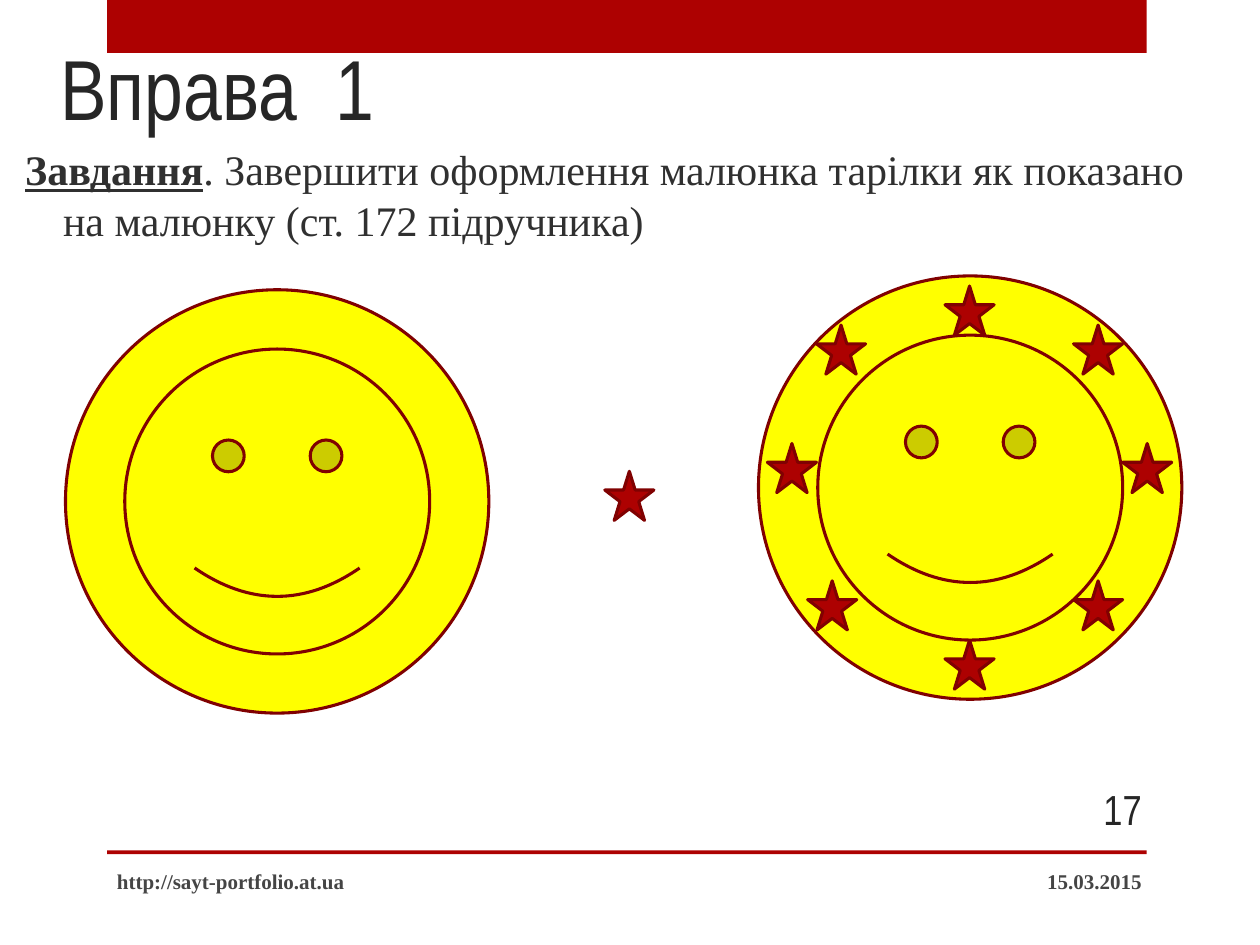
from lxml.etree import SubElement
from pptx import Presentation
from pptx.dml.color import RGBColor
from pptx.enum.shapes import MSO_SHAPE
from pptx.enum.text import MSO_ANCHOR, MSO_AUTO_SIZE, PP_ALIGN
from pptx.oxml.ns import qn
from pptx.util import Inches, Pt

RED, DARK_RED, YELLOW = "AD0101", "800101", "FFFF00"
PLATE, FACE, STAR = 3.36, 2.42, 0.39


def add_figure(shapes, kind, left, top, width, height, fill, line=None):
    figure = shapes.add_shape(kind, Inches(left), Inches(top), Inches(width), Inches(height))
    figure.shadow.inherit = False
    figure.fill.solid()
    figure.fill.fore_color.rgb = RGBColor.from_string(fill)
    if line:
        figure.line.color.rgb = RGBColor.from_string(line)
        figure.line.width = Pt(1.75)
    else:
        figure.line.fill.background()


def add_span(para, text, font, size, color, bold=False, underline=False):
    span = para.add_run()
    span.text = text
    span.font.name = font
    span.font.size = Pt(size)
    span.font.color.rgb = RGBColor.from_string(color)
    span.font.bold = bold
    span.font.underline = underline
    return span


deck = Presentation()
deck.slide_width, deck.slide_height = Inches(10), Inches(7.5)
page = deck.slides.add_slide(deck.slide_layouts[1])

# Red bands at the top and above the footer
for top, height in ((0, 0.42), (6.75, 0.03)):
    add_figure(page.shapes, MSO_SHAPE.RECTANGLE, 0.85, top, 8.25, height, RED)

# Title and task
title, body = page.shapes.title, page.placeholders[1]
for box, left, top, width, height, anchor in (
    (title, 0.38, 0.36, 9, 0.78, MSO_ANCHOR.BOTTOM),
    (body, 0.1, 0.89, 9.78, 1.3, MSO_ANCHOR.MIDDLE),
):
    box.left, box.top = Inches(left), Inches(top)
    box.width, box.height = Inches(width), Inches(height)
    box.text_frame.auto_size = MSO_AUTO_SIZE.NONE
    box.text_frame.word_wrap = True
    box.text_frame.vertical_anchor = anchor

para = title.text_frame.paragraphs[0]
para.alignment = PP_ALIGN.LEFT
add_span(para, "Вправа", "Arial Narrow", 48.6, "262626")
gap = add_span(para, " ", "Arial Narrow", 48.6, "262626")
gap.font._element.set("spc", "1100")  # widens the space, in 1/100 pt
add_span(para, "1", "Arial Narrow", 48.6, "262626")

para = body.text_frame.paragraphs[0]
properties = para._p.get_or_add_pPr()
properties.set("marL", str(Inches(0.3)))
properties.set("indent", str(-Inches(0.3)))
SubElement(properties, qn("a:buNone"))
para.space_before = Pt(0)
add_span(para, "Завдання", "Times New Roman", 24, "303030", bold=True, underline=True)
add_span(para, ". Завершити оформлення малюнка тарілки як показано на малюнку (ст. 172 підручника)",
         "Times New Roman", 24, "303030")

# Single star, then the finished plate with stars and the plain plate
add_figure(page.shapes, MSO_SHAPE.STAR_5_POINT, 4.8, 3.74, STAR, STAR, RED, DARK_RED)

rim_stars = [(7.5, 2.27), (6.09, 3.52), (7.5, 5.08), (8.91, 3.52),
             (8.52, 2.58), (8.52, 4.61), (6.48, 2.58), (6.41, 4.61)]
face_inset = (PLATE - FACE) / 2
for left, top, stars in ((6.02, 2.19, rim_stars), (0.52, 2.3, [])):
    plate = page.shapes.add_group_shape().shapes
    add_figure(plate, MSO_SHAPE.OVAL, left, top, PLATE, PLATE, YELLOW, DARK_RED)
    for star_left, star_top in stars:
        add_figure(plate, MSO_SHAPE.STAR_5_POINT, star_left, star_top, STAR, STAR, RED, DARK_RED)
    add_figure(plate, MSO_SHAPE.SMILEY_FACE, left + face_inset, top + face_inset,
               FACE, FACE, YELLOW, DARK_RED)

# Date, address and page number
for text, left, top, width, align, font, size, color, bold in (
    ("15.03.2015", 6.83, 6.79, 2.33, PP_ALIGN.RIGHT, "Times New Roman", 12, "454545", True),
    ("http://sayt-portfolio.at.ua", 0.83, 6.79, 5.33, PP_ALIGN.LEFT, "Times New Roman", 12, "454545", True),
    ("17", 8.33, 6.22, 0.83, PP_ALIGN.RIGHT, "Arial Narrow", 24, "262626", False),
):
    box = page.shapes.add_textbox(Inches(left), Inches(top), Inches(width), Inches(0.4))
    box.text_frame.word_wrap = True
    box.text_frame.vertical_anchor = MSO_ANCHOR.MIDDLE
    para = box.text_frame.paragraphs[0]
    para.alignment = align
    add_span(para, text, font, size, color, bold)

deck.save("out.pptx")
